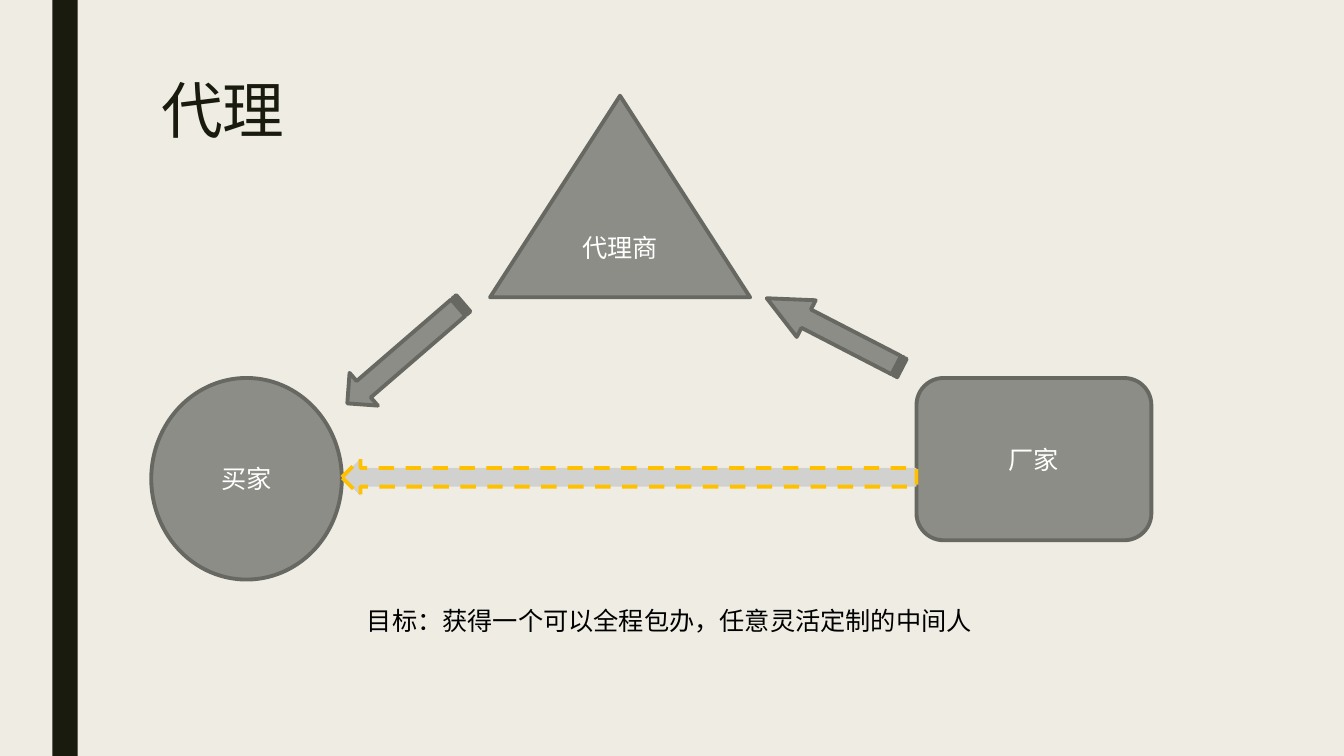
from pptx import Presentation
from pptx.dml.color import RGBColor
from pptx.enum.dml import MSO_LINE
from pptx.enum.shapes import MSO_SHAPE
from pptx.enum.text import MSO_ANCHOR, MSO_AUTO_SIZE, PP_ALIGN
from pptx.util import Inches, Pt

RECT, OVAL = MSO_SHAPE.RECTANGLE, MSO_SHAPE.OVAL
PEAK, ROUND = MSO_SHAPE.ISOSCELES_TRIANGLE, MSO_SHAPE.ROUNDED_RECTANGLE
LEFT, STRIPED = MSO_SHAPE.LEFT_ARROW, MSO_SHAPE.STRIPED_RIGHT_ARROW
DASH, MIDDLE, CENTER = MSO_LINE.DASH, MSO_ANCHOR.MIDDLE, PP_ALIGN.CENTER
TOP, GROW = MSO_ANCHOR.TOP, MSO_AUTO_SIZE.SHAPE_TO_FIT_TEXT

PAPER = RGBColor(0xEF, 0xED, 0xE3)
INK = RGBColor(0x19, 0x1B, 0x0E)
GRAY = RGBColor(0x8C, 0x8D, 0x86)
EDGE = RGBColor(0x68, 0x68, 0x63)
PALE = RGBColor(0xD1, 0xD1, 0xCF)
GOLD = RGBColor(0xFF, 0xC0, 0x00)
WHITE = RGBColor(0xFF, 0xFF, 0xFF)
BLACK = RGBColor(0x00, 0x00, 0x00)

FONT = "Karla"
CELL = Inches(0.25)
COLS, ROWS = 53.32, 30


def grid(*cells):
    """Turn grid cells into slide lengths."""
    return [round(cell * CELL) for cell in cells]


def style(para, size, color):
    """Set the font of a paragraph."""
    para.font.name = FONT
    para.font.size = Pt(size)
    para.font.color.rgb = color


def draw(slide, kind, box, fill=GRAY, edge=EDGE):
    """Add a filled shape, outlined if an edge color is given."""
    shape = slide.shapes.add_shape(kind, *grid(*box))
    shape.shadow.inherit = False
    shape.fill.solid()
    shape.fill.fore_color.rgb = fill
    if edge is None:
        shape.line.fill.background()
    else:
        shape.line.color.rgb = edge
        shape.line.width = Pt(2.75)
    return shape


def write(slide, box, text, size, color, wrap):
    """Add a text box and return its frame."""
    frame = slide.shapes.add_textbox(*grid(*box)).text_frame
    frame.word_wrap = wrap
    frame.vertical_anchor = TOP
    frame.text = text
    style(frame.paragraphs[0], size, color)
    return frame


def add_frame(slide):
    """Paint the background and the side bar."""
    slide.background.fill.solid()
    slide.background.fill.fore_color.rgb = PAPER
    draw(slide, RECT, (2.08, 0, 1, ROWS), INK, None)


def add_title(slide, box):
    """Write the heading."""
    frame = write(slide, box, "代理", 44, INK, True)
    frame.paragraphs[0].line_spacing = 0.89


def add_flow(slide, box):
    """Draw the three parties and the arrows between them."""
    left, top, wide, high = box
    side = 11.2
    buyer = (left, top + side, 7.56, high - side)
    agent = (left + 13.44, top, 10.32, 8)
    maker = (left + wide - 9.32, top + side, 9.32, 6.44)
    for kind, place, name in ((OVAL, buyer, "买家"),
                              (PEAK, agent, "代理商"),
                              (ROUND, maker, "厂家")):
        frame = draw(slide, kind, place).text_frame
        frame.vertical_anchor = MIDDLE
        frame.text = name
        para = frame.paragraphs[0]
        para.alignment = CENTER
        style(para, 18, WHITE)

    start = buyer[0] + buyer[2]
    direct = draw(slide, LEFT, (start, top + 14.4, maker[0] - start, 1.48),
                  PALE, GOLD)
    direct.line.dash_style = DASH
    for place, turn, head in (((24.08, 8.6, 6.04, 1.64), 207.3, 1.075),
                              ((7.04, 9.36, 6.08, 1.72), 139.2, 0.5)):
        x, y, w, h = place
        arrow = draw(slide, STRIPED, (left + x, top + y, w, h))
        arrow.rotation = turn
        arrow.adjustments[1] = head


def add_goal(slide, box):
    """Write the goal under the diagram."""
    text = "目标：获得一个可以全程包办，任意灵活定制的中间人"
    write(slide, box, text, 18, BLACK, False).auto_size = GROW


def main():
    """Build and save the slide."""
    deck = Presentation()
    deck.slide_width, deck.slide_height = grid(COLS, ROWS)
    slide = deck.slides.add_slide(deck.slide_layouts[6])
    add_frame(slide)
    add_title(slide, (6, 3, 42, 6.48))
    add_flow(slide, (6, 3.8, 39.68, 19.2))
    add_goal(slide, (14.16, 23.84, 25.04, 1.6))
    deck.save("out.pptx")


if __name__ == "__main__":
    main()
